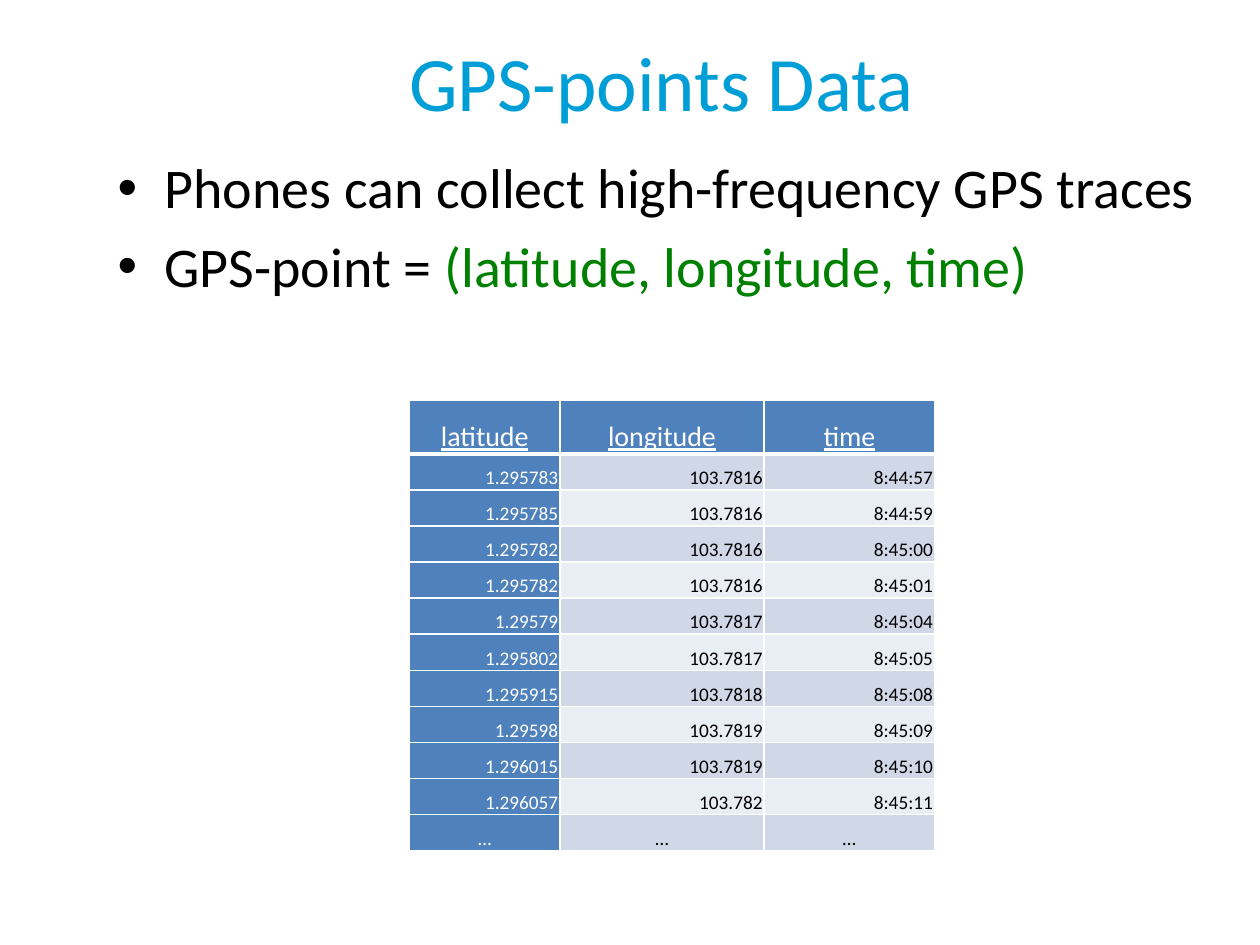
from lxml.etree import SubElement
from pptx import Presentation
from pptx.dml.color import RGBColor
from pptx.enum.text import MSO_ANCHOR, PP_ALIGN
from pptx.oxml.ns import qn
from pptx.util import Cm, Pt

FONT = "Calibri"
WHITE = RGBColor(0xFF, 0xFF, 0xFF)
BLACK = RGBColor(0x00, 0x00, 0x00)
CYAN = RGBColor(0x00, 0x9E, 0xD6)
GREEN = RGBColor(0x00, 0x80, 0x00)
BLUE = RGBColor(0x4F, 0x81, 0xBD)
BAND_DARK = RGBColor(0xD0, 0xD8, 0xE8)
BAND_LIGHT = RGBColor(0xE9, 0xED, 0xF4)

BULLETS = [
    [("Phones can collect high-frequency GPS traces", BLACK)],
    [("GPS-point = ", BLACK), ("(latitude, longitude, time)", GREEN)],
]
HEADER = ("latitude", "longitude", "time")
GPS_POINTS = [
    ("1.295783", "103.7816", "8:44:57"),
    ("1.295785", "103.7816", "8:44:59"),
    ("1.295782", "103.7816", "8:45:00"),
    ("1.295782", "103.7816", "8:45:01"),
    ("1.29579", "103.7817", "8:45:04"),
    ("1.295802", "103.7817", "8:45:05"),
    ("1.295915", "103.7818", "8:45:08"),
    ("1.29598", "103.7819", "8:45:09"),
    ("1.296015", "103.7819", "8:45:10"),
    ("1.296057", "103.782", "8:45:11"),
    ("…", "…", "…"),
]
COLUMN_SHARES = (1.19, 1.62, 1.35)


def set_font(font, size, color):
    font.name = FONT
    font.size = Pt(size)
    font.color.rgb = color


def add_title(slide, left, top, width, height):
    frame = slide.shapes.add_textbox(left, top, width, height).text_frame
    frame.word_wrap = True
    frame.vertical_anchor = MSO_ANCHOR.MIDDLE
    title = frame.paragraphs[0]
    title.text = "GPS-points Data"
    title.alignment = PP_ALIGN.CENTER
    set_font(title.font, 44, CYAN)


def add_bullets(slide, left, top, width, height):
    frame = slide.shapes.add_textbox(left, top, width, height).text_frame
    frame.word_wrap = True
    for index, parts in enumerate(BULLETS):
        point = frame.paragraphs[0] if index == 0 else frame.add_paragraph()
        point.space_before = Pt(6.4)
        set_font(point.font, 32, BLACK)
        properties = point._p.get_or_add_pPr()
        properties.set("marL", str(Cm(0.95)))
        properties.set("indent", str(Cm(-0.95)))
        bullet_font = SubElement(properties, qn("a:buFont"))
        bullet_font.set("typeface", "Arial")
        SubElement(properties, qn("a:buChar")).set("char", "•")
        # list properties must precede the default run properties
        properties.append(properties.find(qn("a:defRPr")))
        for text, color in parts:
            run = point.add_run()
            run.text = text
            set_font(run.font, 32, color)


def add_borders(cell, bottom_width):
    """Draw white cell borders; call before the fill, which must follow them."""
    properties = cell._tc.get_or_add_tcPr()
    for side, width in (("L", 1), ("R", 1), ("T", 1), ("B", bottom_width)):
        line = SubElement(properties, qn(f"a:ln{side}"), w=str(Pt(width)))
        fill = SubElement(line, qn("a:solidFill"))
        SubElement(fill, qn("a:srgbClr"), val=str(WHITE))


def fill_cell(cell, text, row, column):
    is_header = row == 0
    is_blue = is_header or column == 0
    add_borders(cell, 3 if is_header else 1)
    cell.fill.solid()
    cell.fill.fore_color.rgb = BLUE if is_blue else BAND_DARK if row % 2 else BAND_LIGHT
    cell.vertical_anchor = MSO_ANCHOR.BOTTOM
    cell.margin_left = cell.margin_right = cell.margin_top = Cm(0.03)
    cell.margin_bottom = 0
    value = cell.text_frame.paragraphs[0]
    value.text = text
    value.line_spacing = 1.15
    value.alignment = PP_ALIGN.CENTER if is_header or text == "…" else PP_ALIGN.RIGHT
    set_font(value.font, 16 if is_header else 11, WHITE if is_blue else BLACK)
    value.font.underline = is_header


def add_gps_table(slide, left, top, width, height):
    rows = [HEADER, *GPS_POINTS]
    table = slide.shapes.add_table(
        len(rows), len(HEADER), left, top, width, height).table
    for column, share in zip(table.columns, COLUMN_SHARES):
        column.width = int(width * share / sum(COLUMN_SHARES))
    header_height = Cm(1.09)
    for row in table.rows:
        row.height = (height - header_height) // len(GPS_POINTS)
    table.rows[0].height = header_height
    for r, values in enumerate(rows):
        for c, text in enumerate(values):
            fill_cell(table.cell(r, c), text, r, c)


def main():
    presentation = Presentation()
    presentation.slide_width = Cm(25.4)
    presentation.slide_height = Cm(19.05)
    slide = presentation.slides.add_slide(presentation.slide_layouts[6])
    add_title(slide, Cm(2.12), Cm(0.03), Cm(22.43), Cm(3.18))
    add_bullets(slide, Cm(2.12), Cm(2.96), Cm(22.86), Cm(16.09))
    add_gps_table(slide, Cm(8.26), Cm(8.06), Cm(10.58), Cm(9.09))
    presentation.save("out.pptx")


if __name__ == "__main__":
    main()
